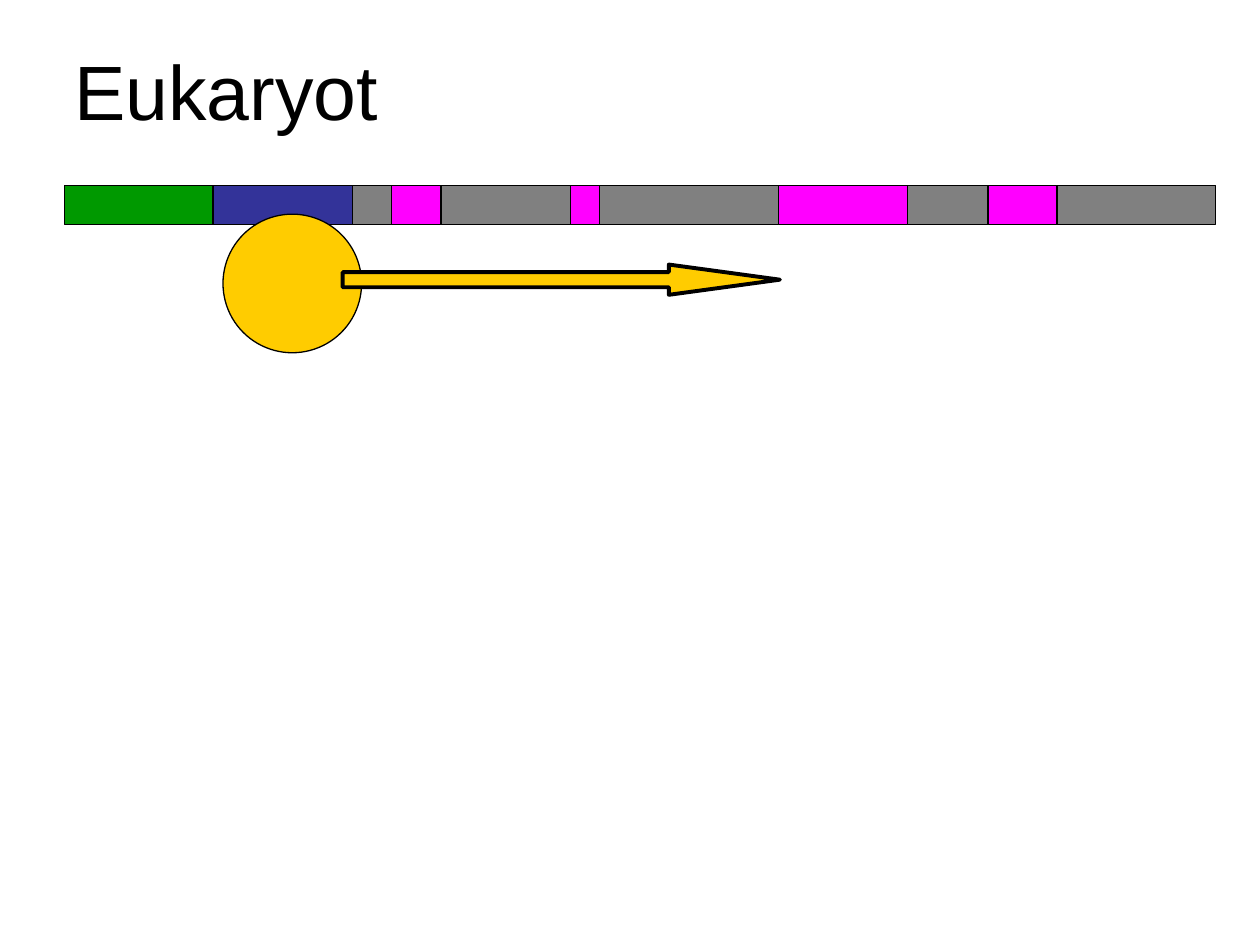
from pptx import Presentation as Deck
from pptx.dml.color import RGBColor as Rgb
from pptx.enum.shapes import MSO_SHAPE as Kind
from pptx.enum.text import MSO_ANCHOR as Anchor, MSO_AUTO_SIZE as Fit, PP_ALIGN as Align
from pptx.util import Inches, Pt

HUES = {
    "ink": "000000",
    "green": "009900",
    "blue": "333399",
    "gray": "808080",
    "pink": "FF00FF",
    "gold": "FFCC00",
}
FONT = {"name": "Arial", "size": Pt(44), "bold": False}
FRAME = {
    "margin_left": Inches(0.08),
    "margin_right": Inches(0.08),
    "margin_top": Inches(0.03),
    "margin_bottom": Inches(0.03),
    "vertical_anchor": Anchor.BOTTOM,
    "word_wrap": True,
    "auto_size": Fit.NONE,
}
GENE = [
    ("green", 1.18), ("blue", 1.11), ("gray", 0.31), ("pink", 0.39),
    ("gray", 1.03), ("pink", 0.23), ("gray", 1.42), ("pink", 1.02),
    ("gray", 0.64), ("pink", 0.55), ("gray", 1.26),
]


def apply(item, values):
    for name, value in values.items():
        setattr(item, name, value)


class Page:
    def __init__(self, deck):
        self.slide = deck.slides.add_slide(deck.slide_layouts[5])

    def hue(self, name):
        return Rgb.from_string(HUES[name])

    def title(self, text, box):
        shape = self.slide.shapes.title
        places = map(Inches, box)
        apply(shape, dict(zip(("left", "top", "width", "height"), places)))
        frame = shape.text_frame
        frame.text = text
        apply(frame, FRAME)
        line = frame.paragraphs[0]
        line.alignment = Align.LEFT
        apply(line.font, FONT)
        line.font.color.rgb = self.hue("ink")

    def shape(self, kind, box, fill, width=0.75):
        shape = self.slide.shapes.add_shape(kind, *map(Inches, box))
        shape.shadow.inherit = False
        shape.fill.solid()
        shape.fill.fore_color.rgb = self.hue(fill)
        shape.line.color.rgb = self.hue("ink")
        shape.line.width = Pt(width)
        return shape

    def strip(self, left, top, height, parts):
        for fill, width in parts:
            self.shape(Kind.RECTANGLE, (left, top, width, height), fill)
            left += width

    def arrow(self, box, fill, shaft, head):
        shape = self.shape(Kind.RIGHT_ARROW, box, fill, 2.25)
        shape.adjustments[0] = shaft
        shape.adjustments[1] = head


def main():
    deck = Deck()
    deck.slide_width, deck.slide_height = Inches(10), Inches(7.5)
    page = Page(deck)
    page.title("Eukaryot", (0.51, 0.28, 4.96, 0.83))
    page.strip(0.51, 1.47, 0.31, GENE)
    page.shape(Kind.OVAL, (1.77, 1.7, 1.1, 1.1), "gold")
    page.arrow((2.72, 2.1, 3.47, 0.24), "gold", 0.5, 3.67)
    deck.save("out.pptx")


if __name__ == "__main__":
    main()
